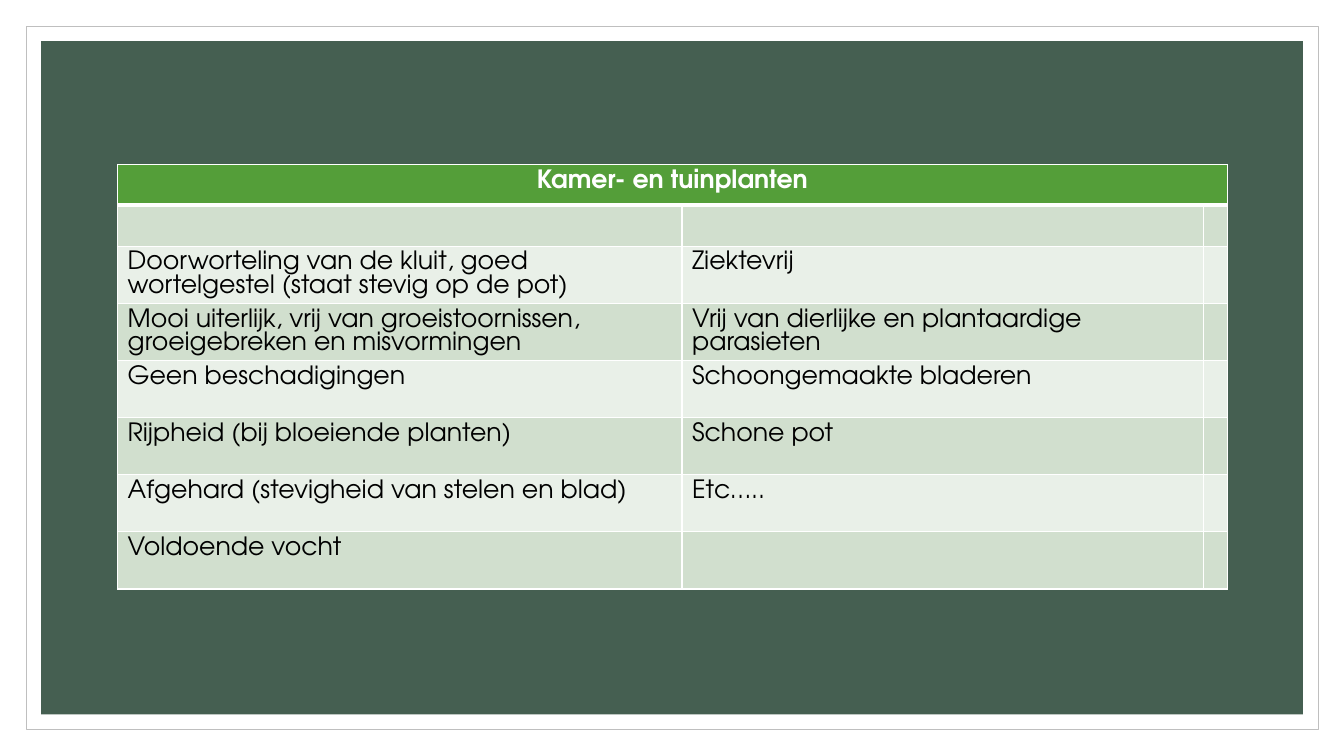
from dataclasses import dataclass

from lxml.etree import SubElement
from pptx import Presentation
from pptx.dml.color import RGBColor
from pptx.enum.shapes import MSO_SHAPE
from pptx.enum.text import PP_ALIGN
from pptx.oxml.ns import qn
from pptx.util import Pt


@dataclass(frozen=True)
class Theme:
    font: str = "TeX Gyre Adventor"
    size: float = 18
    white: str = "FFFFFF"
    black: str = "000000"
    frame: str = "BFBFBF"
    panel: str = "455F51"
    head: str = "549E39"
    bands: tuple = ("E9F0E8", "D1DFCE")


TITLE = "Kamer- en tuinplanten"
ROWS = [
    ("", ""),
    ("Doorworteling van de kluit, goed wortelgestel (staat stevig op de pot)",
     "Ziektevrij"),
    ("Mooi uiterlijk, vrij van groeistoornissen, groeigebreken en misvormingen",
     "Vrij van dierlijke en plantaardige parasieten"),
    ("Geen beschadigingen", "Schoongemaakte bladeren"),
    ("Rijpheid (bij bloeiende planten)", "Schone pot"),
    ("Afgehard (stevigheid van stelen en blad)", "Etc….."),
    ("Voldoende vocht", ""),
]
WIDTHS = (403.2, 372.2, 16.6)
LOW, TALL = 29.2, 40.8


class Painter:
    def __init__(self, slide, theme):
        self.slide = slide
        self.theme = theme

    def rect(self, left, top, width, height, fill, line=None):
        shape = self.slide.shapes.add_shape(
            MSO_SHAPE.RECTANGLE, Pt(left), Pt(top), Pt(width), Pt(height))
        shape.shadow.inherit = False
        shape.fill.solid()
        shape.fill.fore_color.rgb = RGBColor.from_string(fill)
        if line:
            shape.line.color.rgb = RGBColor.from_string(line)
            shape.line.width = Pt(0.5)
        else:
            shape.line.fill.background()

    def edges(self, cell, **widths):
        """Draw white cell borders; widths override the 1 pt default by side."""
        props = cell._tc.get_or_add_tcPr()
        for side in ("L", "R", "T", "B"):
            width = Pt(widths.get(side, 1))
            line = SubElement(props, qn(f"a:ln{side}"), w=str(width))
            fill = SubElement(line, qn("a:solidFill"))
            SubElement(fill, qn("a:srgbClr"), val=self.theme.white)

    def cell(self, cell, text, fill, color, bold=False, align=PP_ALIGN.LEFT):
        cell.fill.solid()
        cell.fill.fore_color.rgb = RGBColor.from_string(fill)
        cell.text_frame.text = text
        para = cell.text_frame.paragraphs[0]
        para.alignment = align
        for run in para.runs:
            font = run.font
            font.name = self.theme.font
            font.size = Pt(self.theme.size)
            font.bold = bold
            font.color.rgb = RGBColor.from_string(color)

    def table(self, left, top, title, rows, widths):
        theme = self.theme
        heights = [LOW, LOW] + [TALL] * (len(rows) - 1)
        table = self.slide.shapes.add_table(
            len(heights), len(widths), Pt(left), Pt(top),
            Pt(sum(widths)), Pt(sum(heights))).table
        table.horz_banding = False
        for column, width in zip(table.columns, widths):
            column.width = Pt(width)
        for row, height in zip(table.rows, heights):
            row.height = Pt(height)

        for cell in table.rows[0].cells:
            self.edges(cell, B=3)
            self.cell(cell, "", theme.head, theme.white)
        head = table.cell(0, 0)
        head.merge(table.cell(0, len(widths) - 1))
        self.cell(head, title, theme.head, theme.white, True, PP_ALIGN.CENTER)

        for index, texts in enumerate(rows, 1):
            for cell, text in zip(table.rows[index].cells, (*texts, "")):
                self.edges(cell, T=3 if index == 1 else 1)
                self.cell(cell, text, theme.bands[index % 2], theme.black)


def main():
    deck = Presentation()
    deck.slide_width, deck.slide_height = Pt(960), Pt(540)
    theme = Theme()
    paint = Painter(deck.slides.add_slide(deck.slide_layouts[6]), theme)
    paint.rect(18.9, 18.9, 922.8, 502.2, theme.white, theme.frame)
    paint.rect(29.3, 29.3, 901.4, 481, theme.panel)
    paint.table(84, 117.4, TITLE, ROWS, WIDTHS)
    deck.save("out.pptx")


if __name__ == "__main__":
    main()
